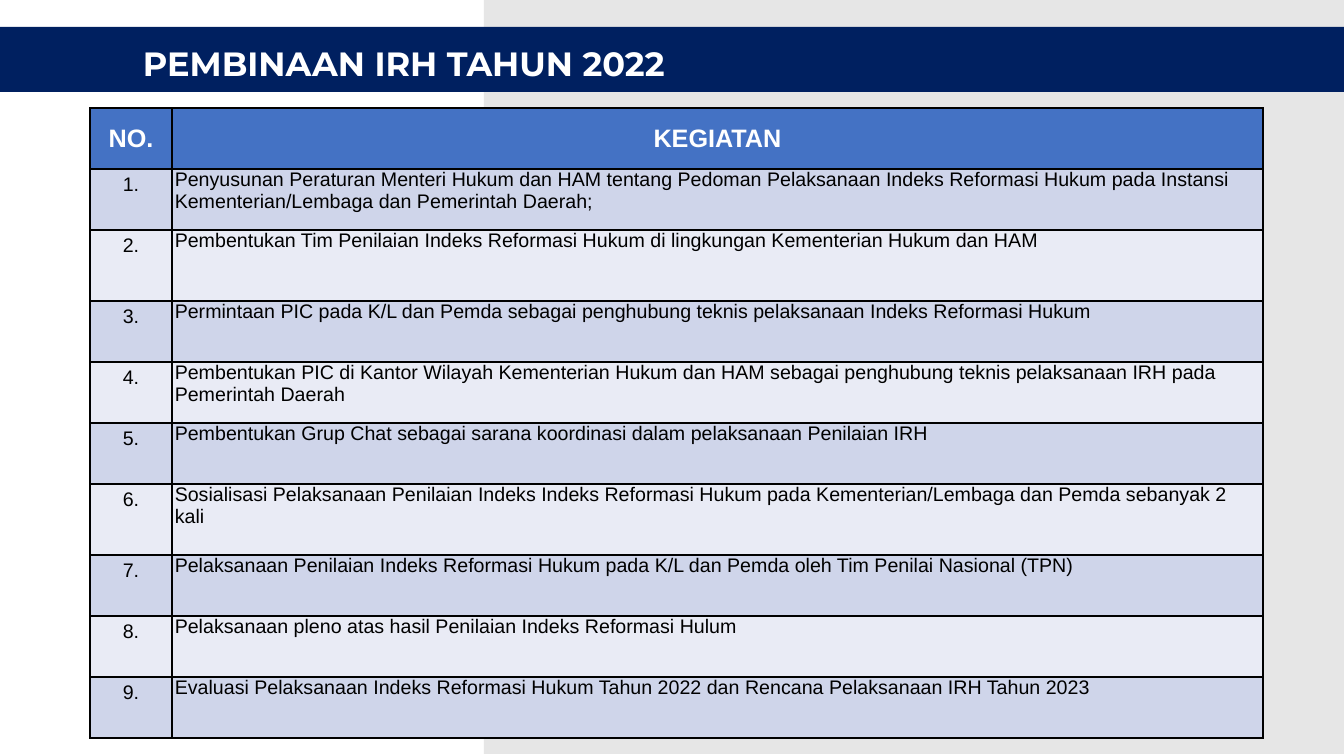
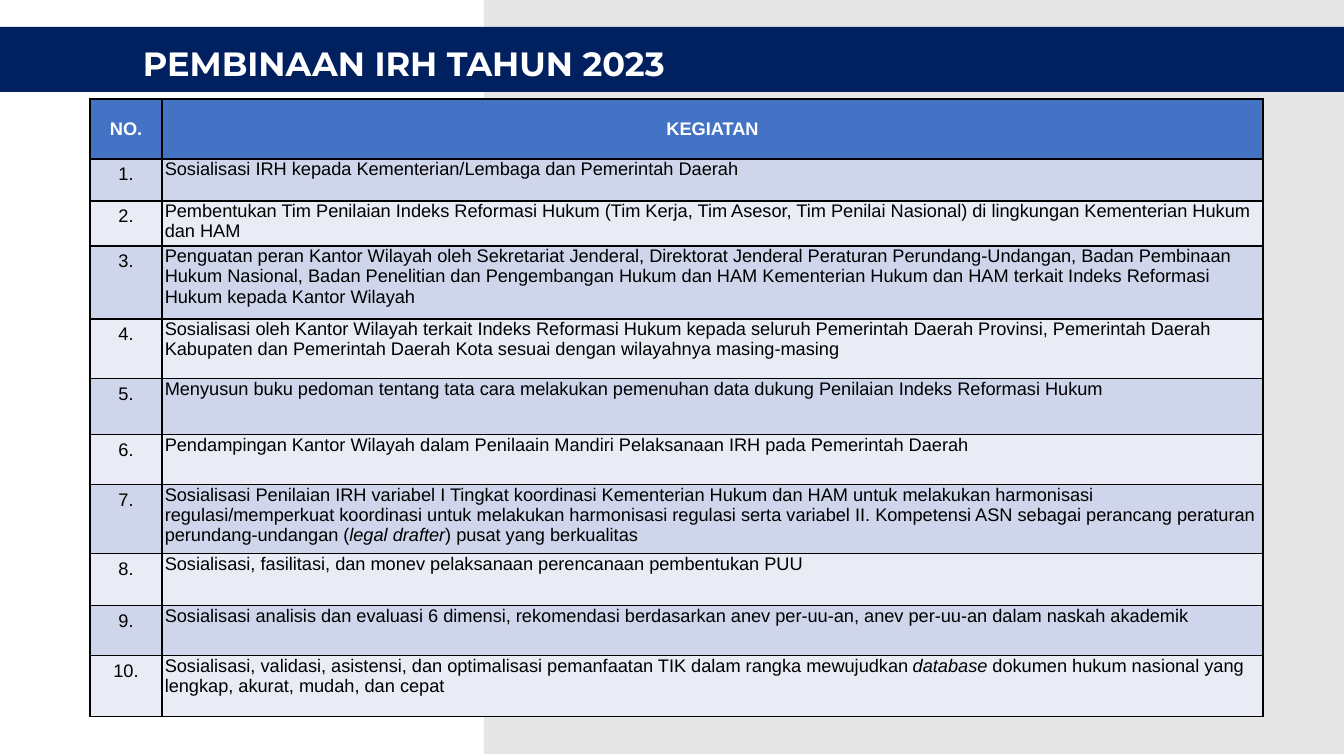
from lxml.etree import SubElement
from pptx import Presentation
from pptx.dml.color import RGBColor
from pptx.enum.shapes import MSO_SHAPE
from pptx.enum.text import MSO_ANCHOR, PP_ALIGN
from pptx.oxml import parse_xml
from pptx.oxml.ns import nsdecls, qn
from pptx.util import Pt

SCALE = 914400 / 100.8
HUES = {
    "panel": "C9C9C9", "band": "002060", "head": "4472C4",
    "odd": "CFD5EA", "even": "E9EBF5", "white": "FFFFFF", "black": "000000",
}
TITLE = {"name": "Montserrat", "size": Pt(24), "bold": True}
NUMBER = {"vertical_anchor": MSO_ANCHOR.TOP}
HEAD = {"vertical_anchor": MSO_ANCHOR.MIDDLE}
BODY = {
    "vertical_anchor": MSO_ANCHOR.TOP,
    "margin_left": Pt(2), "margin_right": Pt(2),
    "margin_top": 0, "margin_bottom": 0,
}
LEFT, WIDTH = 90, 1173

PAGES = [
    {
        "title": "PEMBINAAN IRH TAHUN 2022",
        "top": 108, "first": 82, "head": 18, "body": 14,
        "rows": [61, 61, 71, 61, 61, 61, 71, 61, 61, 61],
        "items": [
            "Penyusunan Peraturan Menteri Hukum dan HAM tentang Pedoman Pelaksanaan Indeks Reformasi Hukum "
            "pada Instansi Kementerian/Lembaga dan Pemerintah Daerah;",
            "Pembentukan Tim Penilaian Indeks Reformasi Hukum di lingkungan Kementerian Hukum dan HAM",
            "Permintaan PIC pada K/L dan Pemda sebagai penghubung teknis pelaksanaan Indeks Reformasi Hukum",
            "Pembentukan PIC di Kantor Wilayah Kementerian Hukum dan HAM sebagai penghubung teknis "
            "pelaksanaan IRH pada Pemerintah Daerah",
            "Pembentukan Grup Chat sebagai sarana koordinasi dalam pelaksanaan Penilaian IRH",
            "Sosialisasi Pelaksanaan Penilaian Indeks Indeks Reformasi Hukum pada Kementerian/Lembaga "
            "dan Pemda sebanyak 2 kali",
            "Pelaksanaan Penilaian Indeks Reformasi Hukum pada K/L dan Pemda oleh Tim Penilai Nasional (TPN)",
            "Pelaksanaan pleno atas hasil Penilaian Indeks Reformasi Hulum",
            "Evaluasi Pelaksanaan Indeks Reformasi Hukum Tahun 2022 dan Rencana Pelaksanaan IRH Tahun 2023",
        ],
    },
    {
        "title": "PEMBINAAN IRH TAHUN 2023",
        "top": 99, "first": 72, "head": 13, "body": 13,
        "rows": [60, 42, 45, 73, 60, 56, 50, 69, 52, 50, 61],
        "items": [
            "Sosialisasi IRH kepada Kementerian/Lembaga dan Pemerintah Daerah",
            "Pembentukan Tim Penilaian Indeks Reformasi Hukum (Tim Kerja, Tim Asesor, Tim Penilai Nasional) "
            "di lingkungan Kementerian Hukum dan HAM",
            "Penguatan peran Kantor Wilayah oleh Sekretariat Jenderal, Direktorat Jenderal Peraturan "
            "Perundang-Undangan, Badan Pembinaan Hukum Nasional, Badan Penelitian dan Pengembangan Hukum "
            "dan HAM Kementerian Hukum dan HAM terkait Indeks Reformasi Hukum kepada Kantor Wilayah",
            "Sosialisasi oleh Kantor Wilayah terkait Indeks Reformasi Hukum kepada seluruh Pemerintah Daerah "
            "Provinsi, Pemerintah Daerah Kabupaten dan Pemerintah Daerah Kota sesuai dengan wilayahnya "
            "masing-masing",
            "Menyusun buku pedoman tentang tata cara melakukan pemenuhan data dukung Penilaian Indeks "
            "Reformasi Hukum",
            "Pendampingan Kantor Wilayah dalam Penilaain Mandiri Pelaksanaan IRH pada Pemerintah Daerah",
            "Sosialisasi Penilaian IRH variabel I Tingkat koordinasi Kementerian Hukum dan HAM untuk "
            "melakukan harmonisasi regulasi/memperkuat koordinasi untuk melakukan harmonisasi regulasi "
            "serta variabel II. Kompetensi ASN sebagai perancang peraturan perundang-undangan "
            "(*legal drafter*) pusat yang berkualitas",
            "Sosialisasi, fasilitasi, dan monev pelaksanaan perencanaan pembentukan PUU",
            "Sosialisasi analisis dan evaluasi 6 dimensi, rekomendasi berdasarkan anev per-uu-an, "
            "anev per-uu-an dalam naskah akademik",
            "Sosialisasi, validasi, asistensi, dan optimalisasi pemanfaatan TIK dalam rangka mewujudkan "
            "*database* dokumen hukum nasional yang lengkap, akurat, mudah, dan cepat",
        ],
    },
]


def px(*sizes):
    return [round(size * SCALE) for size in sizes]


def write(para, text, font, hue):
    for order, part in enumerate(text.split("*")):
        run = para.add_run()
        run.text = part
        for key, value in font.items():
            setattr(run.font, key, value)
        run.font.italic = order % 2 == 1
        run.font.color.rgb = RGBColor.from_string(HUES[hue])


deck = Presentation()
deck.slide_width, deck.slide_height = px(1344, 756)

for page in PAGES:
    slide = deck.slides.add_slide(deck.slide_layouts[6])

    for hue, box in (("panel", (484, 0, 860, 754)), ("band", (0, 27, 1344, 65))):
        shape = slide.shapes.add_shape(MSO_SHAPE.RECTANGLE, *px(*box))
        shape.shadow.inherit = False
        shape.fill.solid()
        shape.fill.fore_color.rgb = RGBColor.from_string(HUES[hue])
        shape.line.fill.background()
        if hue == "panel":
            tint = shape.fill._xPr.find(qn("a:solidFill"))[0]
            SubElement(tint, qn("a:alpha"), val="46000")

    frame = slide.shapes.add_textbox(*px(133, 34, 1130, 59)).text_frame
    frame.word_wrap = True
    frame.vertical_anchor = MSO_ANCHOR.MIDDLE
    write(frame.paragraphs[0], page["title"], TITLE, "white")

    rows = [("NO.", "KEGIATAN")]
    rows += [(f"{count}.", item) for count, item in enumerate(page["items"], 1)]
    area = px(LEFT, page["top"], WIDTH, sum(page["rows"]))
    table = slide.shapes.add_table(len(rows), 2, *area).table
    for column, width in zip(table.columns, px(page["first"], WIDTH - page["first"])):
        column.width = width

    for r, (texts, height) in enumerate(zip(rows, px(*page["rows"]))):
        table.rows[r].height = height
        head = r == 0
        fill = "head" if head else "odd" if r % 2 else "even"
        font = {"name": "Arial", "size": Pt(page["head" if head else "body"]), "bold": head}
        for c, text in enumerate(texts):
            cell = table.cell(r, c)
            for key, value in (HEAD if head else BODY if c else NUMBER).items():
                setattr(cell, key, value)
            cell.fill.solid()
            cell.fill.fore_color.rgb = RGBColor.from_string(HUES[fill])
            para = cell.text_frame.paragraphs[0]
            para.alignment = PP_ALIGN.CENTER if head or c == 0 else PP_ALIGN.LEFT
            write(para, text, font, "white" if head else "black")
            for order, side in enumerate("LRTB"):
                line = parse_xml(
                    f'<a:ln{side} {nsdecls("a")} w="{Pt(1)}"><a:solidFill>'
                    f'<a:srgbClr val="{HUES["black"]}"/></a:solidFill></a:ln{side}>'
                )
                cell._tc.get_or_add_tcPr().insert(order, line)

deck.save("out.pptx")
